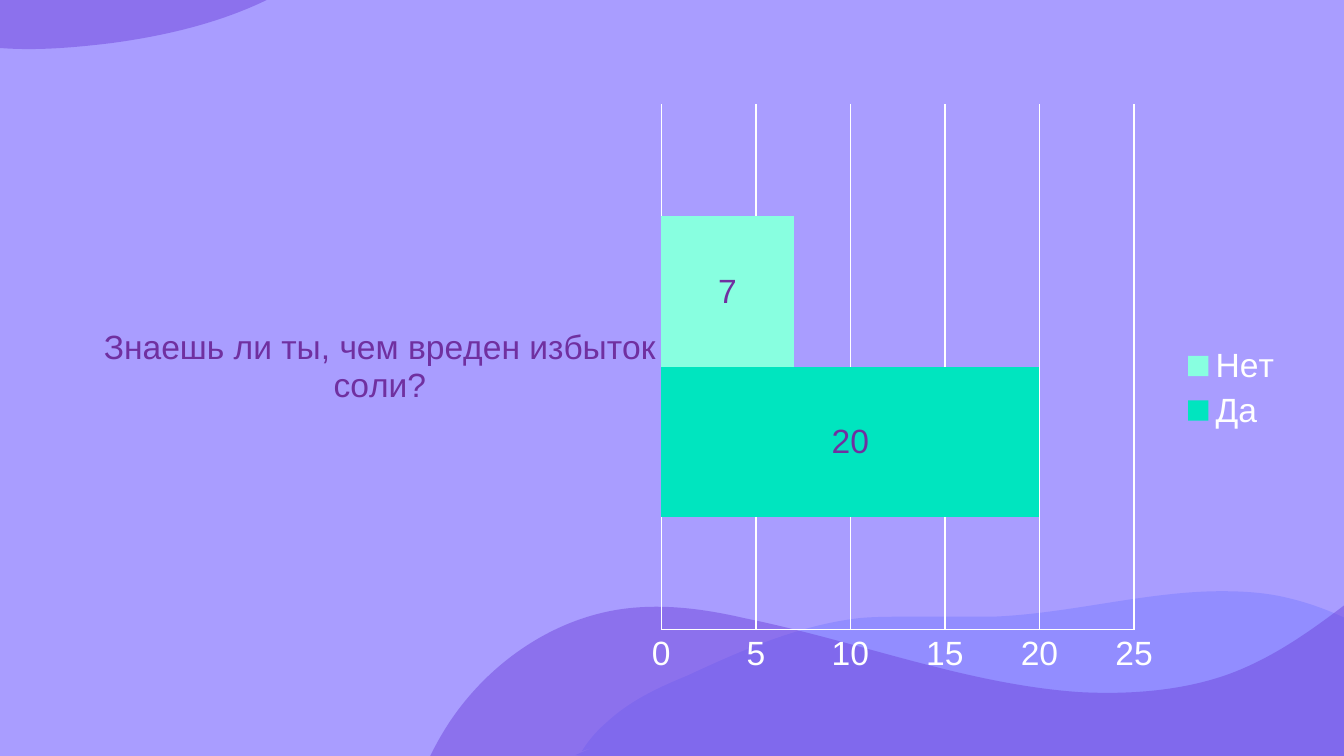
import math
import pptx
import pptx.util
import pptx.chart.data
import pptx.dml.color
import pptx.enum.chart
import pptx.oxml
import pptx.oxml.ns

Cm, Pt = pptx.util.Cm, pptx.util.Pt
qn, nsdecls = pptx.oxml.ns.qn, pptx.oxml.ns.nsdecls
UNIT = 2.54  # wave points are counted in steps of 2.54 cm
FONT = "Arial"
WHITE, PLUM = "FFFFFF", "7030A0"

# Each wave: box, turn, fill, opacity, start, then curves (6) and lines (2)
WAVES = [
    ((-1.3, -0.68, 3.53, 1.18), 195, "6E43DA", 48, (-0.39, 0.29), [
        (0, 0.4, 0.42, 0.37, 0.83, 0.32),
        (1.35, 0.25, 1.88, 0.11, 2.31, -0.19),
        (1.39, -0.44, 0.48, -0.69, -0.44, -0.94),
        (-0.66, -1, -0.87, -1.02, -1.1, -1.03),
        (-1.18, -0.76, -1.23, -0.46, -1.11, -0.21),
        (-0.99, 0.02, -0.77, 0.17, -0.53, 0.25),
        (-0.48, 0.27, -0.44, 0.28, -0.39, 0.29)]),
    ((4.28, 4.4, 7.77, 1.46), 0, "928DFF", 100, (9.09, 4.4), [
        (8.53, 4.4, 7.95, 4.57, 7.38, 4.59),
        (7.33, 4.59, 7.28, 4.59, 7.23, 4.59),
        (7.07, 4.59, 6.9, 4.59, 6.74, 4.59),
        (6.63, 4.59, 6.51, 4.59, 6.4, 4.6),
        (5.95, 4.65, 5.52, 4.84, 5.11, 5.03),
        (4.89, 5.12, 4.68, 5.22, 4.51, 5.38),
        (4.44, 5.44, 4.38, 5.51, 4.33, 5.59),
        (4.42, 5.56), (4.42, 5.56), (4.28, 5.62),
        (5.83, 5.81, 7.4, 5.85, 8.96, 5.85),
        (9.8, 5.85, 10.64, 5.84, 11.48, 5.83),
        (11.68, 5.82, 11.89, 5.82, 12.05, 5.7),
        (11.14, 5.52, 10.49, 4.66, 9.58, 4.45),
        (9.42, 4.41, 9.25, 4.4, 9.09, 4.4)]),
    ((2.92, 3.12, 7.85, 7.42), 208.1, "6E43DA", 48, (2.04, 8.48), [
        (2.68, 8.82, 3.37, 9.07, 4.09, 9.16),
        (4.78, 9.25, 5.49, 9.16, 6.14, 8.91),
        (6.86, 8.64, 7.43, 8.12, 8.13, 7.81),
        (8.77, 7.53, 9.48, 7.42, 10.16, 7.58),
        (10.21, 7.59, 10.66, 7.72, 10.76, 7.78),
        (10.78, 7.79, 10.78, 7.79, 10.78, 7.8),
        (10.78, 7.8),
        (11.24, 6.63, 10.99, 5.31, 10.15, 4.39),
        (9.84, 4.63, 9.53, 4.87, 9.16, 5.01),
        (8.81, 5.14, 8.41, 5.17, 8.03, 5.15),
        (7.18, 5.09, 6.38, 4.77, 5.54, 4.6),
        (5.28, 4.54, 5.01, 4.5, 4.74, 4.52),
        (4.17, 4.56, 3.65, 4.91, 3.34, 5.38),
        (3.02, 5.87, 2.92, 6.47, 2.72, 7.02),
        (2.52, 7.57, 2.21, 8.11, 1.64, 8.25),
        (1.77, 8.33, 1.9, 8.41, 2.04, 8.48)]),
]


def paint(fill, tone):
    fill.solid()
    fill.fore_color.rgb = pptx.dml.color.RGBColor.from_string(tone)


def style(font, tone):
    font.name, font.size = FONT, Pt(18)
    paint(font.fill, tone)


def unturn(box, turn, nums):
    """Turn points back about the box centre, measured from its corner."""
    left, top, width, height = box
    mid_x, mid_y = width / 2, height / 2
    cos, sin = math.cos(math.radians(turn)), math.sin(math.radians(turn))
    dots = []
    for x, y in zip(nums[::2], nums[1::2]):
        dx, dy = x - left - mid_x, y - top - mid_y
        dots.append((Cm((mid_x + dx * cos + dy * sin) * UNIT),
                     Cm((mid_y - dx * sin + dy * cos) * UNIT)))
    return dots


def add_wave(slide, box, turn, tone, alpha, start, parts):
    first = unturn(box, turn, start)[0]
    parts = [unturn(box, turn, part) for part in parts]
    pen = slide.shapes.build_freeform(*first)
    pen.add_line_segments([part[-1] for part in parts], close=True)
    wave = pen.convert_to_shape()
    wave.left, wave.top, wave.width, wave.height = (
        Cm(side * UNIT) for side in box)
    wave.rotation = turn

    # Bend the segments into cubic curves
    steps = f'<a:moveTo><a:pt x="{first[0]}" y="{first[1]}"/></a:moveTo>'
    for part in parts:
        tag = "cubicBezTo" if len(part) == 3 else "lnTo"
        dots = "".join(f'<a:pt x="{x}" y="{y}"/>' for x, y in part)
        steps += f"<a:{tag}>{dots}</a:{tag}>"
    track = wave._element.find(".//" + qn("a:path"))
    track.getparent().replace(track, pptx.oxml.parse_xml(
        f'<a:path {nsdecls("a")} w="{wave.width}" h="{wave.height}">'
        f"{steps}<a:close/></a:path>"))

    # Fill
    wave.shadow.inherit = False
    wave.line.fill.background()
    paint(wave.fill, tone)
    if alpha < 100:
        color = wave._element.spPr.find(".//" + qn("a:srgbClr"))
        color.append(pptx.oxml.parse_xml(
            f'<a:alpha {nsdecls("a")} val="{alpha * 1000}"/>'))


def add_bars(slide, box):
    kinds = pptx.enum.chart
    data = pptx.chart.data.CategoryChartData()
    data.categories = ["Знаешь ли ты, чем вреден избыток соли?"]
    data.add_series("Да", [20])
    data.add_series("Нет", [7])
    chart = slide.shapes.add_chart(kinds.XL_CHART_TYPE.BAR_CLUSTERED,
                                   *map(Cm, box), data).chart
    style(chart.font, WHITE)
    chart.has_title = False

    # Legend
    chart.has_legend = True
    chart.legend.position = kinds.XL_LEGEND_POSITION.RIGHT
    chart.legend.include_in_layout = False
    style(chart.legend.font, WHITE)

    # Axes
    cats, vals = chart.category_axis, chart.value_axis
    for axis, tone in ((cats, PLUM), (vals, WHITE)):
        axis.major_tick_mark = kinds.XL_TICK_MARK.NONE
        axis.minor_tick_mark = kinds.XL_TICK_MARK.NONE
        style(axis.tick_labels.font, tone)
    cats.format.line.fill.background()
    vals.minimum_scale, vals.maximum_scale, vals.major_unit = 0, 25, 5
    vals.has_major_gridlines = True
    for line in (vals.format.line, vals.major_gridlines.format.line):
        paint(line.fill, WHITE)
        line.width = Pt(0.75)

    # Bars and their values
    plot = chart.plots[0]
    plot.vary_by_categories = False
    plot.gap_width, plot.overlap = 150, 0
    for bar, tone in zip(plot.series, ("00E5BF", "88FFE0")):
        paint(bar.format.fill, tone)
        tags = bar.data_labels
        tags.show_value = True
        tags.position = kinds.XL_LABEL_POSITION.CENTER
        style(tags.font, PLUM)


def main():
    deck = pptx.Presentation()
    deck.slide_width, deck.slide_height = Cm(25.4), Cm(14.29)
    slide = deck.slides.add_slide(deck.slide_layouts[6])
    paint(slide.background.fill, "A99DFF")
    for wave in WAVES:
        add_wave(slide, *wave)
    add_bars(slide, (1.5, 1.74, 23, 11.2))
    deck.save("out.pptx")


if __name__ == "__main__":
    main()
